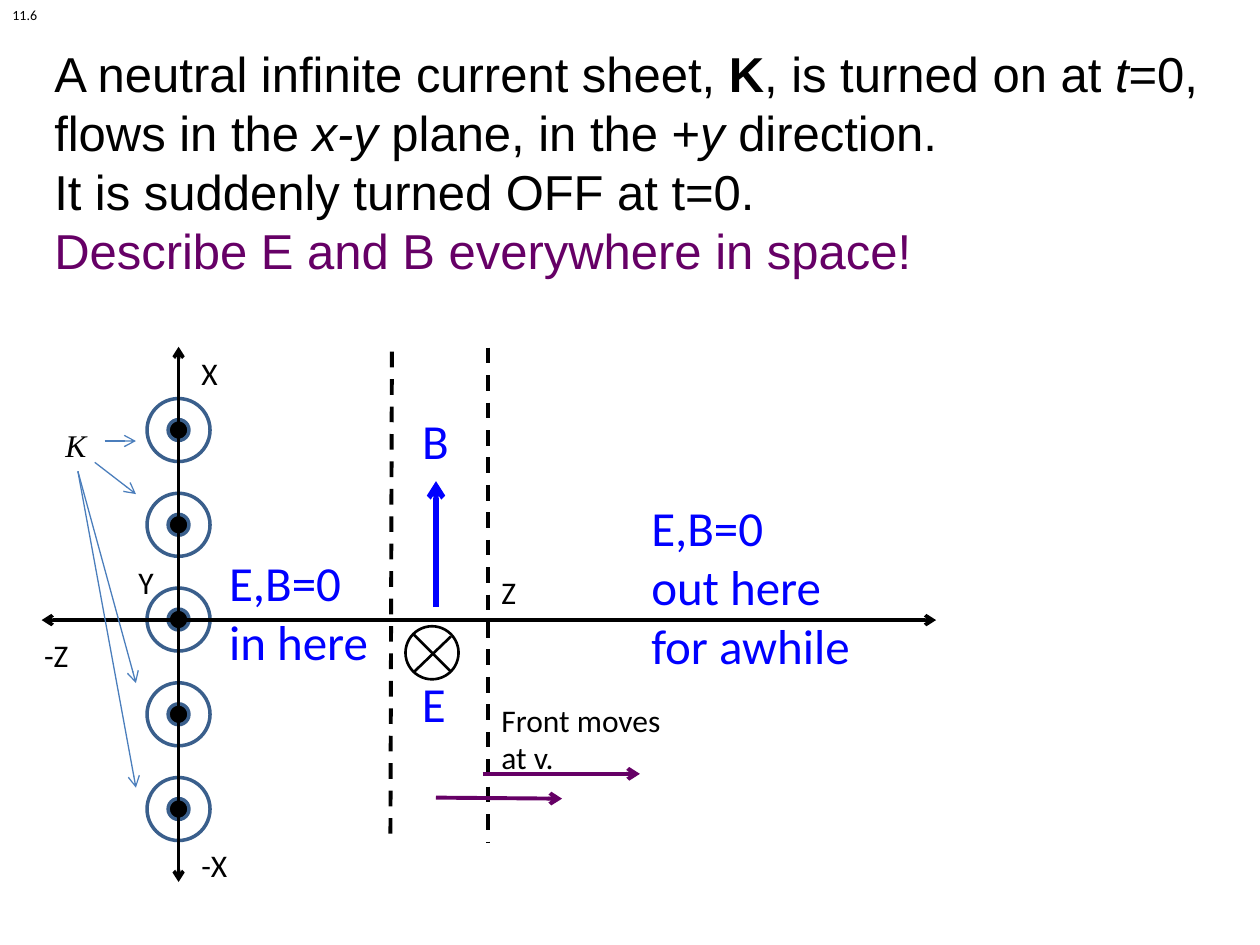
import pptx
import pptx.util
import pptx.dml.color
import pptx.enum.dml
import pptx.enum.shapes
import pptx.enum.text
import pptx.oxml.ns
import lxml.etree

Cm = pptx.util.Cm
BLACK = "000000"
BLUE = "0000FF"
PURPLE = "660066"
RING_BLUE = "3A5F8C"
POINTER_BLUE = "4B7EBC"

TITLE_SPANS = [
    ("A neutral infinite current sheet, ", ""),
    ("K", "bold"),
    (", is turned on at ", ""),
    ("t", "italic"),
    ("=0, flows in the ", ""),
    ("x-y", "italic"),
    (" plane, in the +", ""),
    ("y ", "italic"),
    ("direction. ", "break"),
    ("It is suddenly turned OFF at t=0.  ", "break"),
    ("Describe E and B everywhere in space!", "purple"),
]

AXIS_LABELS = [
    ("X", 3.81, 7.01),
    ("Z", 9.86, 11.43),
    ("Y", 2.54, 11.23),
    ("-Z", 0.64, 12.7),
    ("-X", 3.81, 16.94),
]

CURRENT_POINTERS = [
    ((2.11, 8.89), (2.74, 8.89)),
    ((1.91, 9.32), (2.74, 9.96)),
    ((1.57, 9.5), (2.74, 13.77)),
    ((1.57, 9.5), (2.74, 15.88)),
]


def color(value):
    return pptx.dml.color.RGBColor.from_string(value)


def place(shape, left, top, width, height):
    shape.left, shape.top = Cm(left), Cm(top)
    shape.width, shape.height = Cm(width), Cm(height)


def set_font(font, size, name, shade):
    font.size = pptx.util.Pt(size)
    font.name = name
    font.color.rgb = color(shade)


def add_title(page):
    title = page.shapes.title
    place(title, 0.84, 0.18, 23.7, 6.15)
    frame = title.text_frame
    frame.vertical_anchor = pptx.enum.text.MSO_ANCHOR.MIDDLE
    para = frame.paragraphs[0]
    para.alignment = pptx.enum.text.PP_ALIGN.LEFT
    for text, style in TITLE_SPANS:
        span = para.add_run()
        span.text = text
        shade = PURPLE if style == "purple" else BLACK
        set_font(span.font, 28, "Arial", shade)
        span.font.bold = style == "bold"
        span.font.italic = style == "italic"
        if style == "break":
            para.add_line_break()


def add_electric_label(page):
    box = page.placeholders[1]
    place(box, 7.92, 13.44, 1.65, 1.45)
    box.text_frame.text = "E"
    para = box.text_frame.paragraphs[0]
    para.alignment = pptx.enum.text.PP_ALIGN.CENTER
    set_font(para.font, 28, "Calibri", BLUE)


def add_text(page, text, left, top, width, height, size=18, shade=BLACK,
             name="Calibri", italic=False, wrap=True):
    box = page.shapes.add_textbox(Cm(left), Cm(top), Cm(width), Cm(height))
    frame = box.text_frame
    frame.text = text
    frame.word_wrap = wrap
    frame.auto_size = pptx.enum.text.MSO_AUTO_SIZE.SHAPE_TO_FIT_TEXT
    for para in frame.paragraphs:
        set_font(para.font, size, name, shade)
        para.font.italic = italic


def add_circle(page, center, diameter, shade, weight, fill=None):
    left, top = (value - diameter / 2 for value in center)
    circle = page.shapes.add_shape(
        pptx.enum.shapes.MSO_SHAPE.OVAL,
        Cm(left), Cm(top), Cm(diameter), Cm(diameter))
    circle.shadow.inherit = False
    circle.line.color.rgb = color(shade)
    circle.line.width = pptx.util.Pt(weight)
    if fill:
        circle.fill.solid()
        circle.fill.fore_color.rgb = color(fill)
    else:
        circle.fill.background()


def add_line(page, start, end, shade, weight, ends=(), dashed=False):
    line = page.shapes.add_connector(
        pptx.enum.shapes.MSO_CONNECTOR.STRAIGHT,
        *(Cm(value) for value in start + end))
    line.line.color.rgb = color(shade)
    line.line.width = pptx.util.Pt(weight)
    if dashed:
        line.line.dash_style = pptx.enum.dml.MSO_LINE.DASH
    outline = line.line._get_or_add_ln()
    for end_name in ends:
        lxml.etree.SubElement(
            outline, pptx.oxml.ns.qn("a:" + end_name), type="arrow")
    lxml.etree.SubElement(
        line._element.spPr, pptx.oxml.ns.qn("a:effectLst"))


def add_arrow(page, start, end, shade, weight):
    add_line(page, start, end, shade, weight, ends=("tailEnd",))


def add_current_sheet(page):
    for index in range(5):
        center = (3.6, 8.67 + 1.91 * index)
        add_circle(page, center, 0.42, RING_BLUE, 2, fill=BLACK)
        add_circle(page, center, 1.27, RING_BLUE, 2)


def add_axes(page):
    for start, end in [((3.6, 17.78), (3.6, 6.99)),
                       ((0.84, 12.5), (18.87, 12.5))]:
        add_line(page, start, end, BLACK, 2, ends=("headEnd", "tailEnd"))
    for text, left, top in AXIS_LABELS:
        add_text(page, text, left, top, 1.4, 1.02)


def add_current_label(page):
    add_text(page, "K", 1.07, 8.46, 1.07, 1.02,
             name="Times New Roman", italic=True)
    for start, end in CURRENT_POINTERS:
        add_arrow(page, start, end, POINTER_BLUE, 0.75)


def add_fronts(page):
    add_line(page, (9.83, 7.01), (9.83, 16.97), BLACK, 2.25, dashed=True)
    add_line(page, (7.9, 7.09), (7.87, 17.04), BLACK, 2.25, dashed=True)
    add_text(page, "Front moves at v.", 9.86, 14, 4.01, 1.8)
    add_arrow(page, (8.79, 16.08), (11.33, 16.1), PURPLE, 2.25)
    add_arrow(page, (9.73, 15.6), (12.9, 15.6), PURPLE, 2.25)


def add_fields(page):
    add_text(page, "B", 8.26, 8.15, 3.18, 1.45, 28, BLUE)
    add_arrow(page, (8.79, 12.24), (8.79, 9.7), BLUE, 3)
    add_circle(page, (8.71, 13.16), 1.07, BLACK, 1.5)
    add_line(page, (8.33, 12.78), (9.09, 13.54), BLACK, 1.5)
    add_line(page, (9.09, 12.83), (8.33, 13.56), BLACK, 1.5)
    add_electric_label(page)
    add_text(page, "E,B=0 in here", 4.37, 11.02, 3.58, 2.64, 28, BLUE)
    add_text(page, "E,B=0\nout here for awhile",
             12.88, 9.91, 4.88, 3.84, 28, BLUE)


def main():
    deck = pptx.Presentation()
    deck.slide_width, deck.slide_height = Cm(25.4), Cm(19.05)
    page = deck.slides.add_slide(deck.slide_layouts[0])
    add_title(page)
    add_current_sheet(page)
    add_axes(page)
    add_current_label(page)
    add_fronts(page)
    add_fields(page)
    add_text(page, "11.6", 0, 0, 1.02, 0.61, size=8, wrap=False)
    deck.save("out.pptx")


if __name__ == "__main__":
    main()
